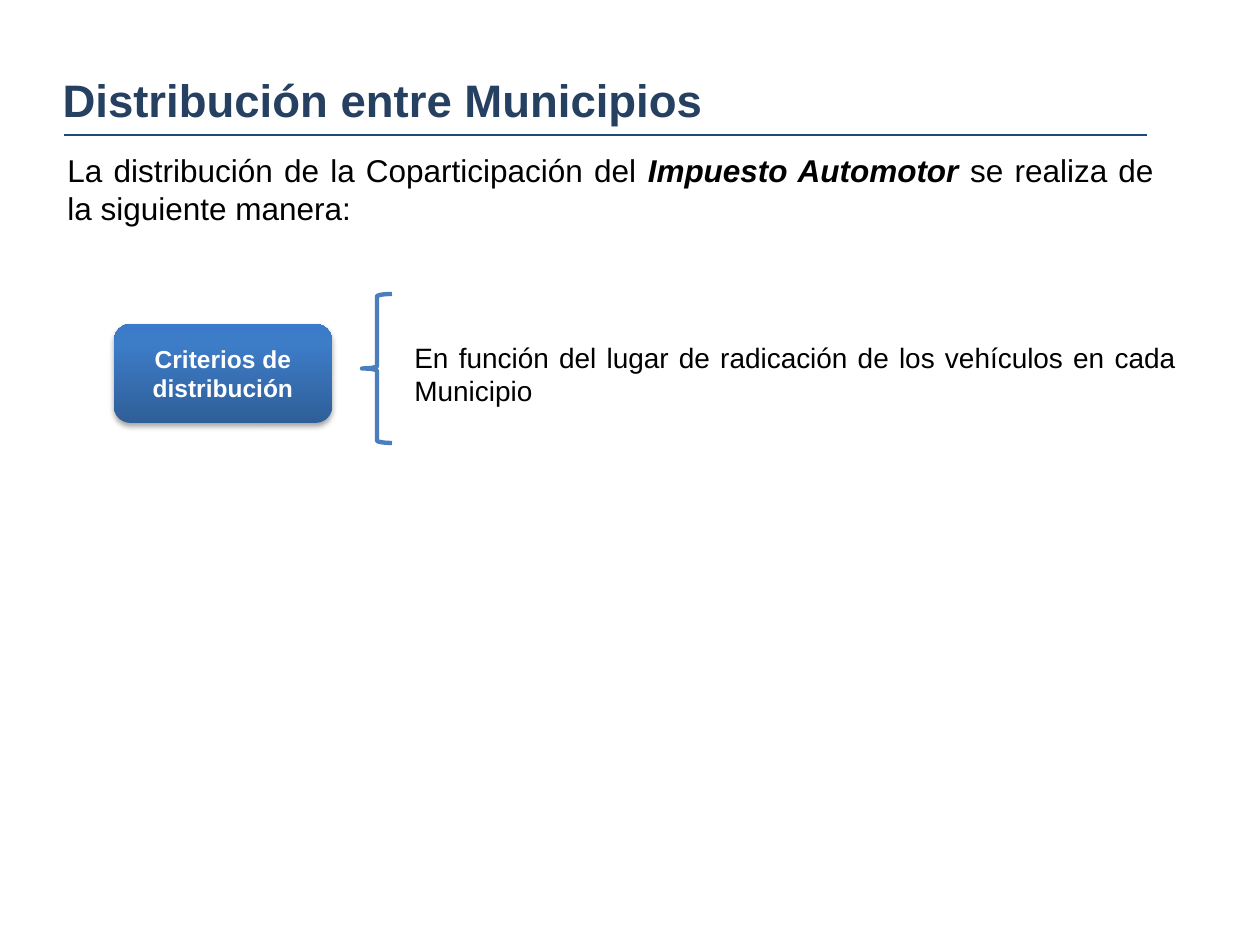
from lxml import etree
from pptx import Presentation
from pptx.dml.color import RGBColor
from pptx.enum.shapes import MSO_CONNECTOR, MSO_SHAPE
from pptx.enum.text import MSO_ANCHOR, PP_ALIGN
from pptx.oxml import parse_xml
from pptx.oxml.ns import nsdecls, qn
from pptx.util import Emu, Pt

NAVY = RGBColor(0x25, 0x40, 0x61)
RULE = RGBColor(0x1F, 0x49, 0x7D)
BRACE = RGBColor(0x4B, 0x7E, 0xBC)
BLACK = RGBColor(0, 0, 0)
WHITE = RGBColor(255, 255, 255)
STOPS = [(0, "2F5F99"), (80, "3D7CC7"), (100, "3A7CCB")]

TITLE = [("Distribución entre Municipios", {"bold": True})]
INTRO = [
    ("La distribución de la Coparticipación del ", {}),
    ("Impuesto Automotor ", {"bold": True, "italic": True}),
    ("se realiza de la siguiente manera:", {}),
]
LABEL = [("Criterios de distribución", {"bold": True})]
RULING = [("En función del lugar de radicación de los vehículos en cada Municipio", {})]


def px(*vals):
    return [Emu(round(v * 914400 / 126)) for v in vals]


def write(shape, runs, size, color, align, anchor=MSO_ANCHOR.TOP):
    frame = shape.text_frame
    frame.word_wrap = True
    frame.vertical_anchor = anchor
    par = frame.paragraphs[0]
    par.alignment = align
    for text, style in runs:
        run = par.add_run()
        run.text = text
        run.font.color.rgb = color
        look = {"name": "Arial", "size": Pt(size), **style}
        for key, val in look.items():
            setattr(run.font, key, val)


def shade(shape):
    """Give the shape an upward gradient and a soft shadow below."""
    stops = "".join(
        f'<a:gs pos="{pos * 1000}"><a:srgbClr val="{rgb}"/></a:gs>'
        for pos, rgb in STOPS
    )
    props = shape._element.spPr
    props.find(qn("a:prstGeom")).addnext(parse_xml(
        f'<a:gradFill {nsdecls("a")} rotWithShape="1"><a:gsLst>{stops}</a:gsLst>'
        '<a:lin ang="16200000" scaled="0"/></a:gradFill>'))
    props.append(parse_xml(
        f'<a:effectLst {nsdecls("a")}>'
        f'<a:outerShdw blurRad="{Pt(3.1)}" dist="{Pt(1.8)}" dir="5400000" rotWithShape="0">'
        '<a:srgbClr val="000000"><a:alpha val="35000"/></a:srgbClr>'
        '</a:outerShdw></a:effectLst>'))


def main():
    deck = Presentation()
    deck.slide_width, deck.slide_height = px(1260, 945)
    slide = deck.slides.add_slide(deck.slide_layouts[5])
    shapes = slide.shapes

    title = shapes.title
    title.left, title.top, title.width, title.height = px(50, 66, 1111, 68)
    write(title, TITLE, 26, NAVY, PP_ALIGN.LEFT)

    rule = shapes.add_connector(MSO_CONNECTOR.STRAIGHT, *px(64, 135, 1147, 135))
    rule.line.color.rgb = RULE
    rule.line.width = Pt(1.5)
    etree.SubElement(rule._element.spPr, qn("a:effectLst"))

    intro = shapes.add_textbox(*px(55, 145, 1111, 89))
    write(intro, INTRO, 18, BLACK, PP_ALIGN.JUSTIFY)

    label = shapes.add_shape(MSO_SHAPE.ROUNDED_RECTANGLE, *px(114, 324, 218, 99))
    label.line.fill.background()
    shade(label)
    write(label, LABEL, 14, WHITE, PP_ALIGN.CENTER, MSO_ANCHOR.MIDDLE)

    brace = shapes.add_shape(MSO_SHAPE.LEFT_BRACE, *px(362, 294, 30, 149))
    brace.shadow.inherit = False
    brace.fill.background()
    brace.line.color.rgb = BRACE
    brace.line.width = Pt(2.5)

    ruling = shapes.add_textbox(*px(402, 334, 786, 81))
    write(ruling, RULING, 16, BLACK, PP_ALIGN.JUSTIFY)

    deck.save("out.pptx")


if __name__ == "__main__":
    main()
